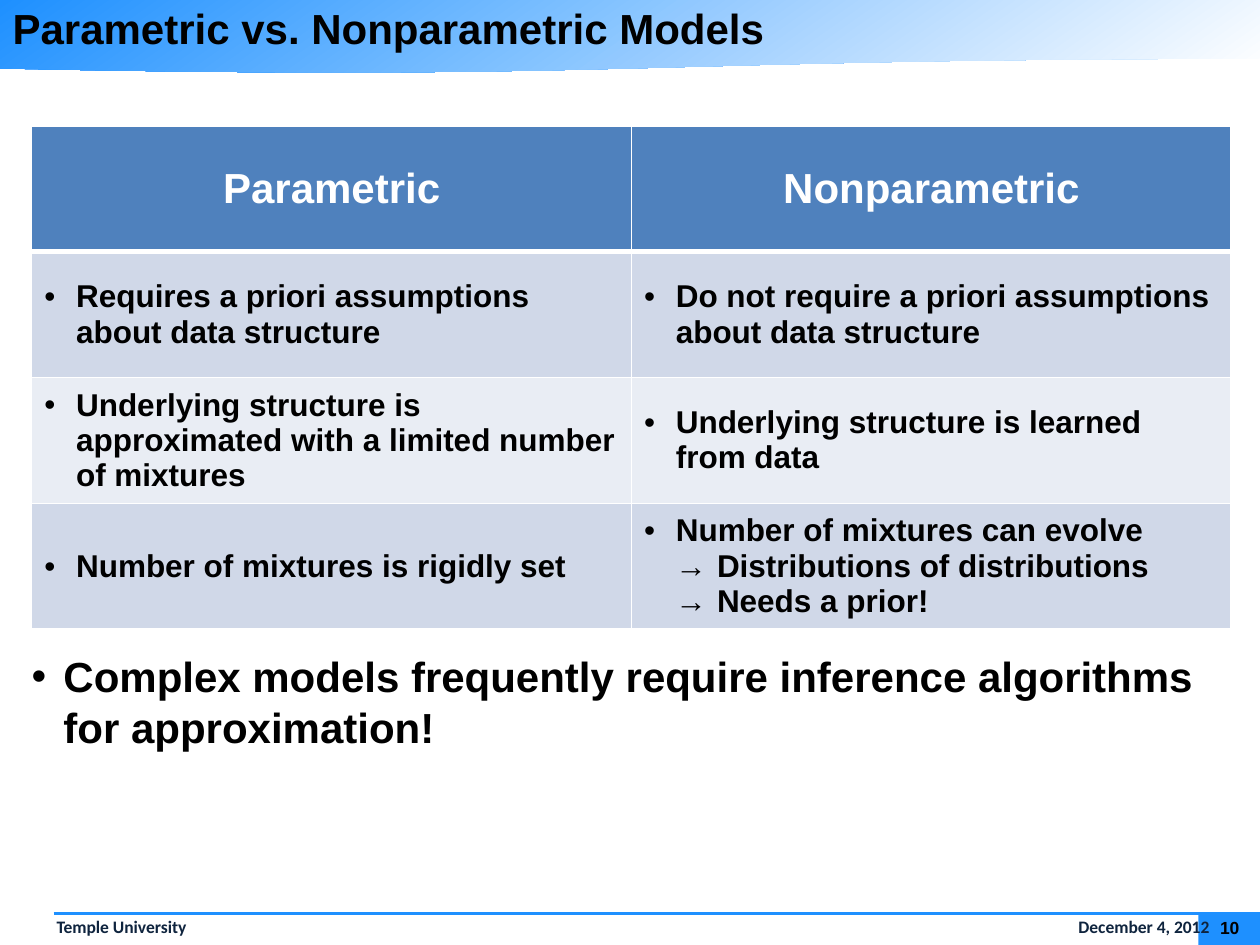
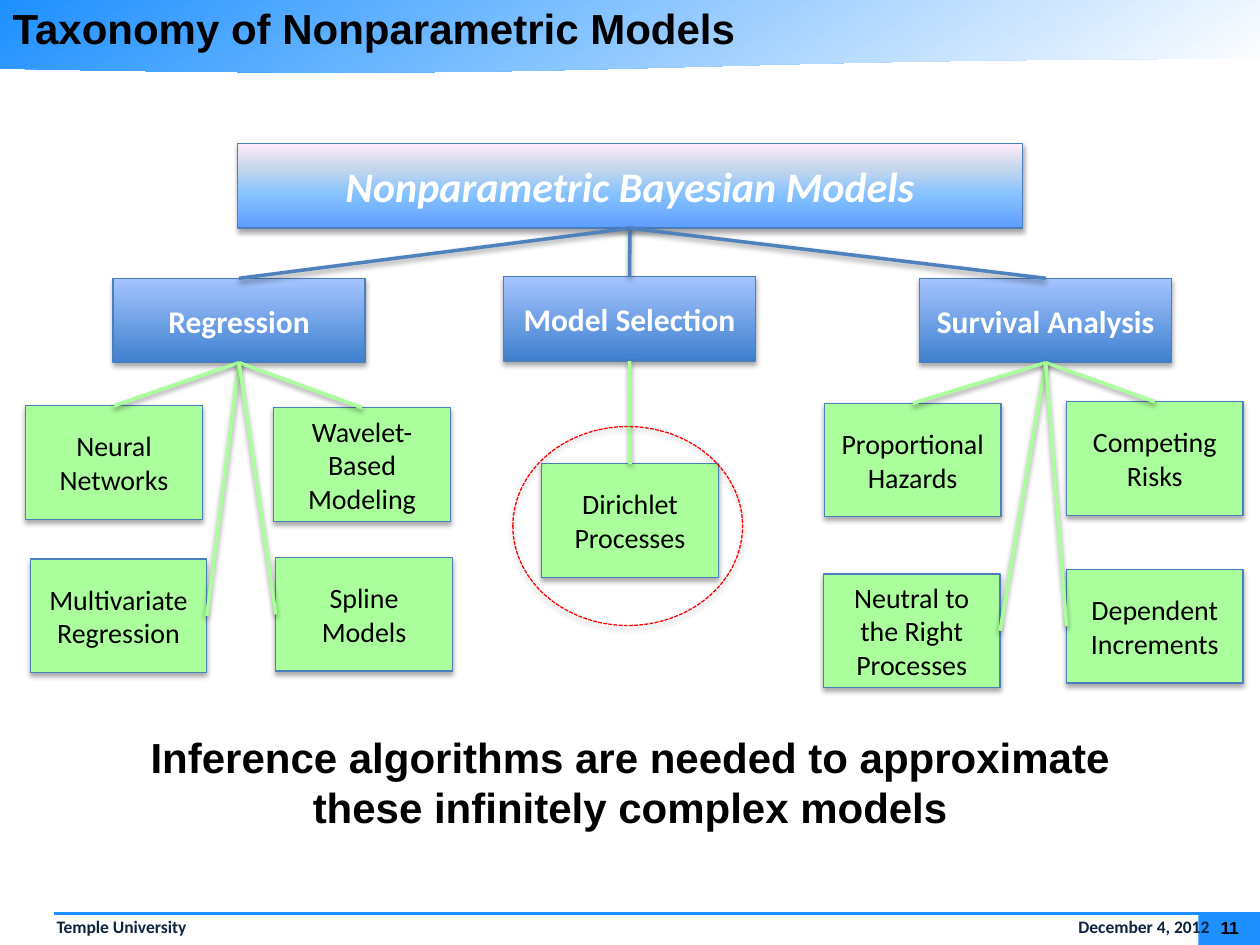
from dataclasses import dataclass
from typing import Optional, Union

from lxml.etree import SubElement
from pptx import Presentation
from pptx.dml.color import RGBColor
from pptx.enum.dml import MSO_LINE
from pptx.enum.shapes import MSO_CONNECTOR, MSO_SHAPE
from pptx.enum.text import MSO_ANCHOR, MSO_AUTO_SIZE, PP_ALIGN
from pptx.oxml.ns import qn
from pptx.util import Cm, Pt

BLACK = RGBColor(0x00, 0x00, 0x00)
WHITE = RGBColor(0xFF, 0xFF, 0xFF)
NAVY = RGBColor(0x0F, 0x24, 0x3E)
AZURE = RGBColor(0x1E, 0x90, 0xFF)
BLUE = RGBColor(0x4F, 0x81, 0xBD)
EDGE = RGBColor(0x4B, 0x7E, 0xBC)
GREEN = RGBColor(0xAA, 0xFE, 0x9C)
RED = RGBColor(0xFF, 0x00, 0x00)
DARK = RGBColor(0xD0, 0xD8, 0xE8)
LIGHT = RGBColor(0xE9, 0xED, 0xF4)

TOP, LEFT, BOTTOM, RIGHT = range(4)


@dataclass(frozen=True)
class Mark:
    char: str
    left: float
    hang: float


@dataclass(frozen=True)
class Fade:
    stops: tuple
    angle: int


@dataclass(frozen=True)
class Look:
    fill: Union[Fade, RGBColor]
    width: float
    height: float
    size: int
    color: RGBColor
    bold: bool = False
    italic: bool = False


@dataclass(frozen=True)
class Leaf:
    text: str
    x: float
    y: float
    site: int = TOP


@dataclass(frozen=True)
class Branch:
    text: str
    x: float
    y: float
    leaves: tuple


DOT = Mark("•", 0.64, 0.64)
ARROW = Mark("→", 1.47, 0.84)

BAND = Fade(((0, AZURE), (100, WHITE)), 55)
ROOT = Look(Fade(((0, RGBColor(0x5E, 0x9E, 0xFF)), (40, RGBColor(0x85, 0xC2, 0xFF)),
                  (70, RGBColor(0xC4, 0xD6, 0xEB)), (100, RGBColor(0xFF, 0xEB, 0xFA))), 270),
            15.82, 1.7, 24, WHITE, True, True)
FIELD = Look(Fade(((0, RGBColor(0x3F, 0x80, 0xCE)), (100, RGBColor(0xA4, 0xC4, 0xFF))), 270),
             5.08, 1.7, 18, WHITE, True)
MODEL = Look(GREEN, 3.56, 2.29, 16, BLACK)

ROWS = (
    ("Parametric", "Nonparametric"),
    ("Requires a priori assumptions about data structure",
     "Do not require a priori assumptions about data structure"),
    ("Underlying structure is approximated with a limited number of mixtures",
     "Underlying structure is learned from data"),
    ("Number of mixtures is rigidly set",
     ("Number of mixtures can evolve", "Distributions of distributions", "Needs a prior!")),
)

TREE = (
    Branch("Regression", 2.28, 5.61, (
        Leaf("Neural Networks", 0.52, 8.18),
        Leaf("Wavelet-Based Modeling", 5.52, 8.22),
        Leaf("Multivariate Regression", 0.61, 11.27, RIGHT),
        Leaf("Spline Models", 5.56, 11.24, LEFT))),
    Branch("Model Selection", 10.15, 5.58, (
        Leaf("Dirichlet Processes", 10.92, 9.35),)),
    Branch("Survival Analysis", 18.54, 5.61, (
        Leaf("Proportional Hazards", 16.62, 8.13),
        Leaf("Competing Risks", 21.5, 8.1),
        Leaf("Neutral to the Right Processes", 16.6, 11.57, RIGHT),
        Leaf("Dependent Increments", 21.5, 11.48, LEFT))),
)


def write(frame, text, *, size: int = 24, color: RGBColor = BLACK, font: str = "Arial",
          bold: bool = True, italic: bool = False, align=PP_ALIGN.LEFT,
          marks: tuple = (), spacing: Optional[float] = None) -> None:
    lines = (text,) if isinstance(text, str) else text
    for i, line in enumerate(lines):
        para = frame.paragraphs[0] if i == 0 else frame.add_paragraph()
        para.alignment = align
        if spacing:
            para.line_spacing = spacing
        if marks:
            add_mark(para, marks[i])
        run = para.add_run()
        run.text = line
        run.font.name, run.font.size = font, Pt(size)
        run.font.bold, run.font.italic = bold, italic
        run.font.color.rgb = color


def add_mark(para, mark: Mark) -> None:
    props = para._p.get_or_add_pPr()
    props.set("marL", str(Cm(mark.left)))
    props.set("indent", str(-Cm(mark.hang)))
    SubElement(props, qn("a:buFont"), typeface="Arial")
    SubElement(props, qn("a:buChar"), char=mark.char)


def add_tint(parent, color: RGBColor):
    return SubElement(parent, qn("a:srgbClr"), val=str(color))


def paint(shape, fill) -> None:
    if fill is None:
        shape.fill.background()
    elif isinstance(fill, Fade):
        props = shape.element.spPr
        grad = SubElement(props, qn("a:gradFill"), rotWithShape="1")
        stops = SubElement(grad, qn("a:gsLst"))
        for spot, color in fill.stops:
            add_tint(SubElement(stops, qn("a:gs"), pos=str(spot * 1000)), color)
        SubElement(grad, qn("a:lin"), ang=str(fill.angle * 60000), scaled="0")
        props.find(qn("a:prstGeom")).addnext(grad)
    else:
        shape.fill.solid()
        shape.fill.fore_color.rgb = fill


def set_shade(shape, alpha: int = 0, drop: float = 0) -> None:
    effects = SubElement(shape.element.spPr, qn("a:effectLst"))
    if alpha:
        shade = SubElement(effects, qn("a:outerShdw"), blurRad=str(Pt(3.1)), dist=str(Pt(drop)),
                           dir="5400000", rotWithShape="0")
        SubElement(add_tint(shade, BLACK), qn("a:alpha"), val=str(alpha * 1000))


def add_form(slide, kind, x: float, y: float, width: float, height: float, *,
             fill=None, line: Optional[RGBColor] = None, alpha: int = 0):
    shape = slide.shapes.add_shape(kind, Cm(x), Cm(y), Cm(width), Cm(height))
    paint(shape, fill)
    if line is None:
        shape.line.fill.background()
    else:
        shape.line.color.rgb = line
        shape.line.width = Pt(0.75)
    set_shade(shape, alpha, 1.8)
    return shape


def add_line(slide, color: RGBColor, width: float, start=(0, 0), end=(0, 0)):
    line = slide.shapes.add_connector(MSO_CONNECTOR.STRAIGHT, *map(Cm, start + end))
    line.line.color.rgb = color
    line.line.width = Pt(width)
    return line


def add_note(slide, x: float, y: float, width: float, height: float, inset: bool = True):
    frame = slide.shapes.add_textbox(Cm(x), Cm(y), Cm(width), Cm(height)).text_frame
    frame.word_wrap = True
    if not inset:
        frame.margin_left = frame.margin_right = frame.margin_top = frame.margin_bottom = 0
    return frame


def add_page(deck, title: str, number: int):
    slide = deck.slides.add_slide(deck.slide_layouts[5])
    add_form(slide, MSO_SHAPE.FLOWCHART_DOCUMENT, 0, 0, 25.43, 1.48, fill=BAND)
    add_form(slide, MSO_SHAPE.RECTANGLE, 24.16, 18.39, 1.27, 0.66, fill=AZURE)

    foot = add_note(slide, 0.1, 18.37, 25.32, 0.66)
    props = foot.paragraphs[0]._p.get_or_add_pPr()
    props.set("marL", str(Cm(0.79)))
    tabs = SubElement(props, qn("a:tabLst"))
    SubElement(tabs, qn("a:tab"), pos=str(Cm(23.35)), algn="r")
    write(foot, "Temple University\tDecember 4, 2012", size=10, color=NAVY,
          font="Calibri", spacing=0.95)

    set_shade(add_line(slide, AZURE, 1.5, (1.08, 18.42), (25.4, 18.42)))
    page = add_note(slide, 24.28, 18.49, 1.02, 0.43, inset=False)
    page.vertical_anchor = MSO_ANCHOR.MIDDLE
    write(page, str(number), size=10, align=PP_ALIGN.CENTER)

    head = slide.shapes.title
    head.left, head.top, head.width, head.height = map(Cm, (0, 0, 25.4, 1.1))
    head.text_frame.auto_size = MSO_AUTO_SIZE.NONE
    head.text_frame.word_wrap = False
    head.text_frame.vertical_anchor = MSO_ANCHOR.MIDDLE
    write(head.text_frame, title)
    slide.shapes._spTree.append(head.element)
    return slide


def add_rules(cell, row: int) -> None:
    props = cell._tc.get_or_add_tcPr()
    thick = {"lnT": row == 1, "lnB": row == 0}
    for side in ("lnL", "lnR", "lnT", "lnB"):
        rule = SubElement(props, qn(f"a:{side}"), w=str(Pt(3 if thick.get(side) else 1)))
        add_tint(SubElement(rule, qn("a:solidFill")), WHITE)


def add_grid(slide) -> None:
    grid = slide.shapes.add_table(len(ROWS), 2, Cm(0.64), Cm(2.54), Cm(24.18), Cm(10.14)).table
    for r, texts in enumerate(ROWS):
        for c, text in enumerate(texts):
            cell = grid.cell(r, c)
            add_rules(cell, r)
            cell.fill.solid()
            cell.vertical_anchor = MSO_ANCHOR.MIDDLE
            if r == 0:
                cell.fill.fore_color.rgb = BLUE
                write(cell.text_frame, text, color=WHITE, align=PP_ALIGN.CENTER)
            else:
                cell.fill.fore_color.rgb = DARK if r % 2 else LIGHT
                write(cell.text_frame, text, size=18, marks=(DOT, ARROW, ARROW))


def add_box(slide, text: str, x: float, y: float, look: Look):
    box = add_form(slide, MSO_SHAPE.RECTANGLE, x, y, look.width, look.height,
                   fill=look.fill, line=EDGE, alpha=35)
    box.text_frame.word_wrap = True
    box.text_frame.vertical_anchor = MSO_ANCHOR.MIDDLE
    write(box.text_frame, text, size=look.size, color=look.color, font="Calibri",
          bold=look.bold, italic=look.italic, align=PP_ALIGN.CENTER)
    return box


def link(slide, start, end, site: int, color: RGBColor) -> None:
    line = add_line(slide, color, 2)
    line.begin_connect(start, BOTTOM)
    line.end_connect(end, site)
    set_shade(line, 38, 1.6)


def add_tree(slide) -> None:
    root = add_box(slide, "Nonparametric Bayesian Models", 4.79, 2.9, ROOT)
    fields = [add_box(slide, b.text, b.x, b.y, FIELD) for b in TREE]
    links = [(field, add_box(slide, leaf.text, leaf.x, leaf.y, MODEL), leaf.site)
             for branch, field in zip(TREE, fields) for leaf in branch.leaves]
    for field, box, site in links:
        link(slide, field, box, site, GREEN)
    for field in fields:
        link(slide, root, field, TOP, BLUE)
    ring = add_form(slide, MSO_SHAPE.OVAL, 10.34, 8.6, 4.63, 4.01, line=RED, alpha=35)
    ring.line.dash_style = MSO_LINE.SQUARE_DOT


def main() -> None:
    deck = Presentation()
    deck.slide_width, deck.slide_height = Cm(25.4), Cm(19.05)

    slide = add_page(deck, "Parametric vs. Nonparametric Models", 10)
    add_grid(slide)
    write(add_note(slide, 0.64, 13.12, 24, 2.06, inset=False),
          "Complex models frequently require inference algorithms for approximation!",
          marks=(DOT,))

    slide = add_page(deck, "Taxonomy of Nonparametric Models", 11)
    add_tree(slide)
    write(add_note(slide, 0.64, 14.62, 24.13, 2.31),
          ("Inference algorithms are needed to approximate", "these infinitely complex models"),
          align=PP_ALIGN.CENTER)

    deck.save("out.pptx")


if __name__ == "__main__":
    main()
